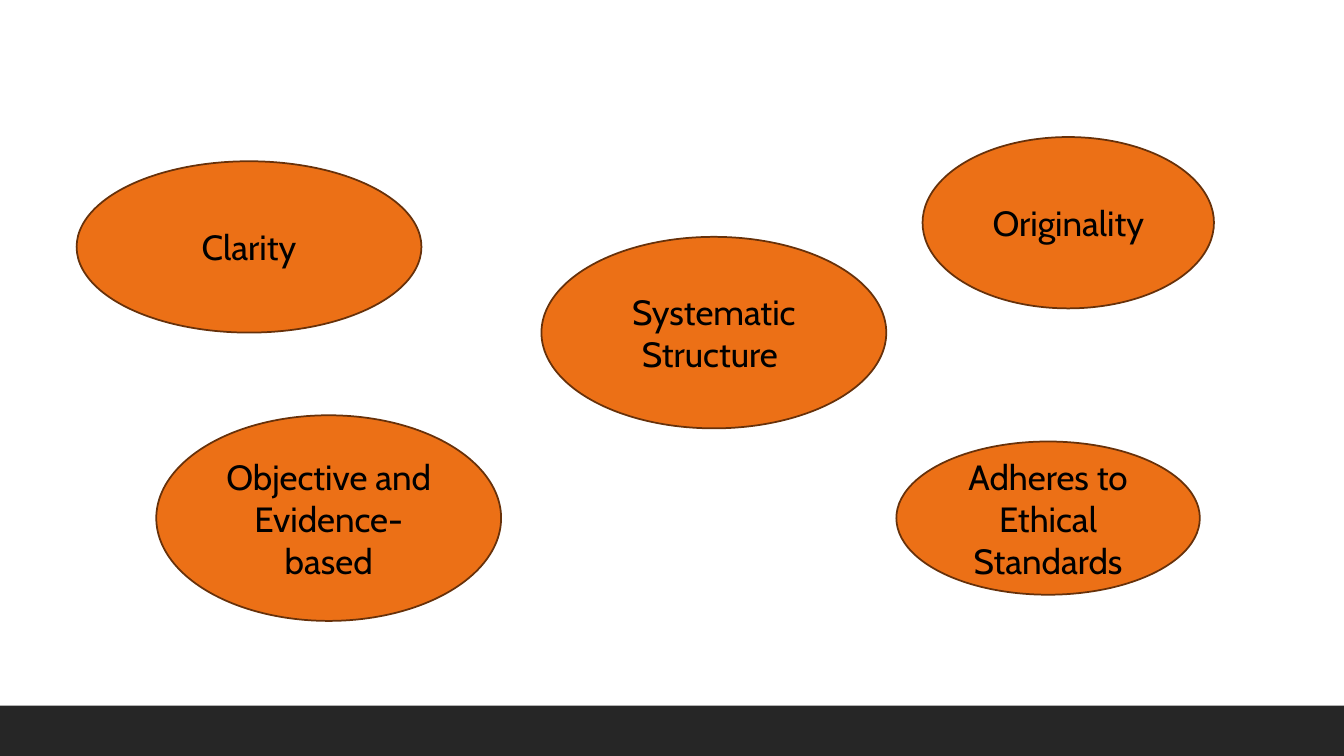
import pptx
import pptx.dml.color
import pptx.enum.shapes
import pptx.enum.text
import pptx.util

PX = 9144  # EMU per px, 100 px to the inch
SLIDE_WIDTH, SLIDE_HEIGHT = 1333, 750
FOOTER_HEIGHT = 50
COLORS = {
    "footer": "262626",
    "quality": "EC7016",
    "outline": "67310A",
    "text": "000000",
}
# Each quality with its left, top, width and height in px
QUALITIES = [
    ("Clarity", (76, 160, 342, 170)),
    ("Objective and Evidence-based", (155, 412, 342, 204)),
    ("Systematic Structure ", (537, 235, 342, 190)),
    ("Originality", (915, 136, 289, 170)),
    ("Adheres to Ethical Standards", (889, 438, 301, 152)),
]


def color(name):
    return pptx.dml.color.RGBColor.from_string(COLORS[name])


def add_filled(slide, kind, box, fill):
    filled = slide.shapes.add_shape(kind, *(length * PX for length in box))
    filled.shadow.inherit = False
    filled.fill.solid()
    filled.fill.fore_color.rgb = color(fill)
    return filled


def add_footer(slide, box):
    footer = add_filled(slide, pptx.enum.shapes.MSO_SHAPE.RECTANGLE, box, "footer")
    footer.line.fill.background()


def add_quality(slide, label, box):
    quality = add_filled(slide, pptx.enum.shapes.MSO_SHAPE.OVAL, box, "quality")
    quality.line.color.rgb = color("outline")
    quality.line.width = pptx.util.Pt(1.25)

    # Centred label
    frame = quality.text_frame
    frame.word_wrap = True
    frame.vertical_anchor = pptx.enum.text.MSO_ANCHOR.MIDDLE
    paragraph = frame.paragraphs[0]
    paragraph.alignment = pptx.enum.text.PP_ALIGN.CENTER
    run = paragraph.add_run()
    run.text = label
    run.font.name = "Cabin"
    run.font.size = pptx.util.Pt(25)
    run.font.color.rgb = color("text")


def main():
    deck = pptx.Presentation()
    deck.slide_width = SLIDE_WIDTH * PX
    deck.slide_height = SLIDE_HEIGHT * PX
    slide = deck.slides.add_slide(deck.slide_layouts[6])

    # Footer band along the bottom edge
    add_footer(slide, (0, SLIDE_HEIGHT - FOOTER_HEIGHT, SLIDE_WIDTH, FOOTER_HEIGHT))

    # Scattered qualities
    for label, box in QUALITIES:
        add_quality(slide, label, box)

    deck.save("out.pptx")


if __name__ == "__main__":
    main()
